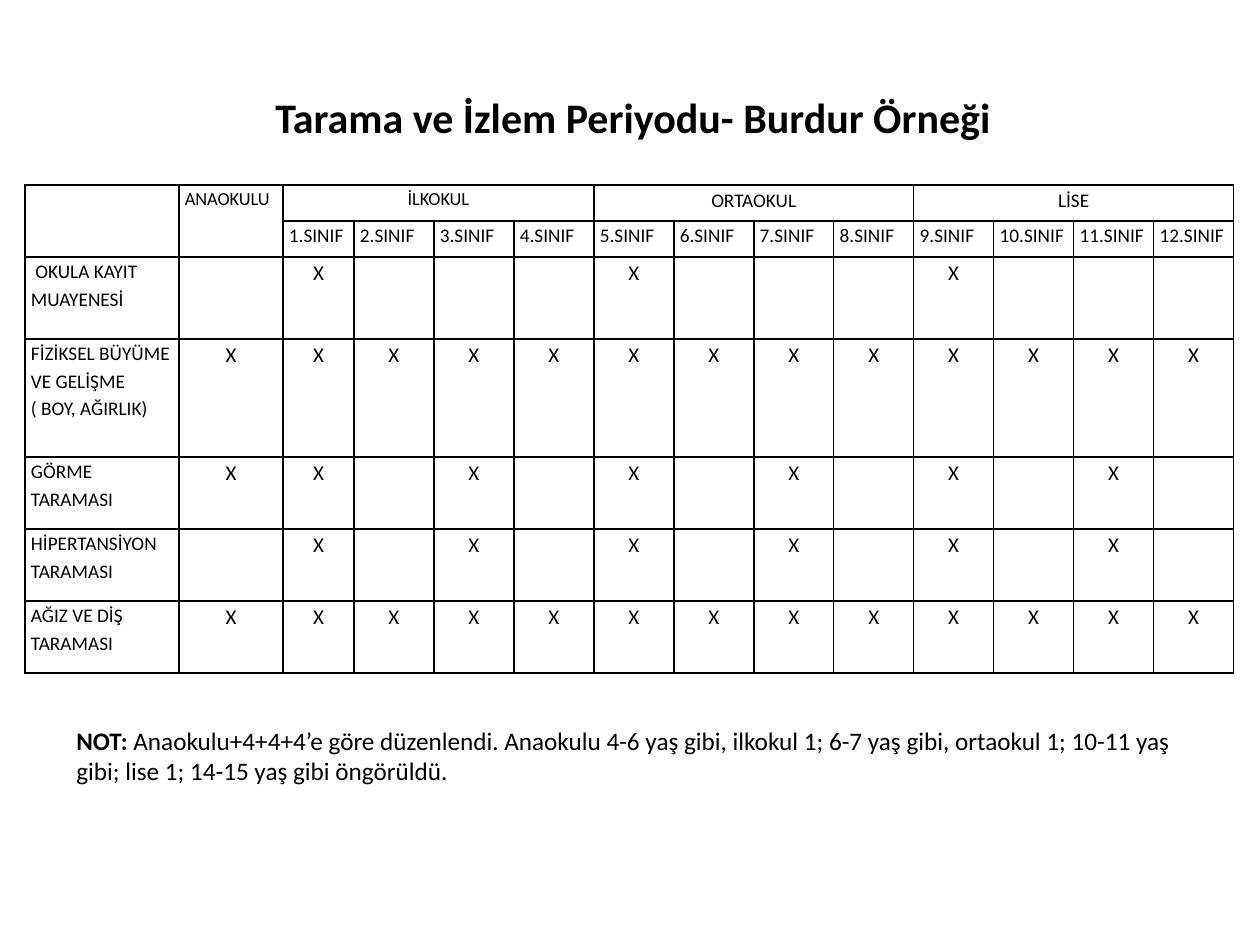
from lxml.etree import SubElement
from pptx import Presentation
from pptx.dml.color import RGBColor
from pptx.enum.text import MSO_ANCHOR, PP_ALIGN
from pptx.oxml.ns import qn
from pptx.util import Emu, Pt

EMU_PER_PX = 914400 // 126

SCHOOLS = ["İLKOKUL", "ORTAOKUL", "LİSE"]
GRADES_PER_SCHOOL = 4
GRADES = [f"{number}.SINIF" for number in range(1, 13)]
# One mark per column: ANAOKULU first, then the twelve grades
SCREENINGS = [
    (" OKULA KAYIT MUAYENESİ", "-X---X---X---"),
    ("FİZİKSEL BÜYÜME VE GELİŞME ( BOY, AĞIRLIK)", "XXXXXXXXXXXXX"),
    ("GÖRME TARAMASI", "XX-X-X-X-X-X-"),
    ("HİPERTANSİYON TARAMASI", "-X-X-X-X-X-X-"),
    ("AĞIZ VE DİŞ TARAMASI", "XXXXXXXXXXXXX"),
]
COLUMN_WIDTHS = [154, 104, 71] + [80] * 11
ROW_HEIGHTS = [36, 36, 82, 118, 72, 72, 72]


def px(length):
    return Emu(length * EMU_PER_PX)


def color(value):
    return RGBColor.from_string(value)


def write(frame, *spans, size, ink, font, align=PP_ALIGN.LEFT, spacing=None):
    """Fill the first paragraph with (text, bold) spans."""
    para = frame.paragraphs[0]
    para.alignment = align
    para.line_spacing = spacing
    for text, bold in spans:
        span = para.add_run()
        span.text = text
        span.font.size = Pt(size)
        span.font.bold = bold
        span.font.name = font
        span.font.color.rgb = color(ink)


class SlideBuilder:
    font = "Calibri"
    ink = "000000"
    paper = "FFFFFF"

    def __init__(self, page):
        self.page = page

    def text(self, left, top, width, height, *spans, size, inset=6):
        box = self.page.shapes.add_textbox(px(left), px(top), px(width), px(height))
        frame = box.text_frame
        frame.word_wrap = True
        frame.vertical_anchor = MSO_ANCHOR.TOP
        frame.margin_top = px(inset)
        write(frame, *spans, size=size, ink=self.ink, font=self.font)

    def table(self, left, top, widths, heights):
        frame = self.page.shapes.add_table(
            len(heights), len(widths), px(left), px(top), px(sum(widths)), px(sum(heights)))
        grid = frame.table
        grid.first_row = grid.horz_banding = False
        for column, width in zip(grid.columns, widths):
            column.width = px(width)
        for row, height in zip(grid.rows, heights):
            row.height = px(height)
        return grid

    def cell(self, cell, text, size=11, align=PP_ALIGN.LEFT):
        cell.margin_left = cell.margin_right = px(6)
        cell.margin_top = cell.margin_bottom = 0
        self.borders(cell)
        cell.fill.solid()
        cell.fill.fore_color.rgb = color(self.paper)
        write(cell.text_frame, (text, False), size=size, ink=self.ink,
              font=self.font, align=align, spacing=1.15)

    def borders(self, cell):
        properties = cell._tc.get_or_add_tcPr()
        for side in ("a:lnL", "a:lnR", "a:lnT", "a:lnB"):
            line = SubElement(properties, qn(side), w=str(Pt(1)))
            fill = SubElement(line, qn("a:solidFill"))
            SubElement(fill, qn("a:srgbClr"), val=self.ink)


def add_screening_table(builder):
    grid = builder.table(25, 185, COLUMN_WIDTHS, ROW_HEIGHTS)
    for column in (0, 1):
        grid.cell(0, column).merge(grid.cell(1, column))

    school_row = ["", "ANAOKULU"]
    for school in SCHOOLS:
        first = len(school_row)
        grid.cell(0, first).merge(grid.cell(0, first + GRADES_PER_SCHOOL - 1))
        school_row += [school] + [""] * (GRADES_PER_SCHOOL - 1)

    for column, text in enumerate(school_row):
        builder.cell(grid.cell(0, column), text,
                     size=10.5 if text in ("ANAOKULU", "İLKOKUL") else 11,
                     align=PP_ALIGN.CENTER if text in SCHOOLS else PP_ALIGN.LEFT)
    for column, text in enumerate(["", ""] + GRADES):
        builder.cell(grid.cell(1, column), text)
    for row, (screening, marks) in enumerate(SCREENINGS, start=2):
        builder.cell(grid.cell(row, 0), screening)
        for column, mark in enumerate(marks, start=1):
            builder.cell(grid.cell(row, column), mark.strip("-"), size=12,
                         align=PP_ALIGN.CENTER)


def main():
    deck = Presentation()
    deck.slide_width, deck.slide_height = px(1260), px(945)
    builder = SlideBuilder(deck.slides.add_slide(deck.slide_layouts[6]))
    add_screening_table(builder)
    builder.text(64, 700, 1134, 129, ("NOT:", True),
                 (" Anaokulu+4+4+4’e göre düzenlendi. Anaokulu 4-6 yaş gibi, ilkokul 1; "
                  "6-7 yaş gibi, ortaokul 1; 10-11 yaş gibi; lise 1; 14-15 yaş gibi "
                  "öngörüldü.", False), size=14.4, inset=25)
    builder.text(263, 86, 747, 63, ("Tarama ve İzlem Periyodu- Burdur Örneği", True), size=24)
    deck.save("out.pptx")


if __name__ == "__main__":
    main()
